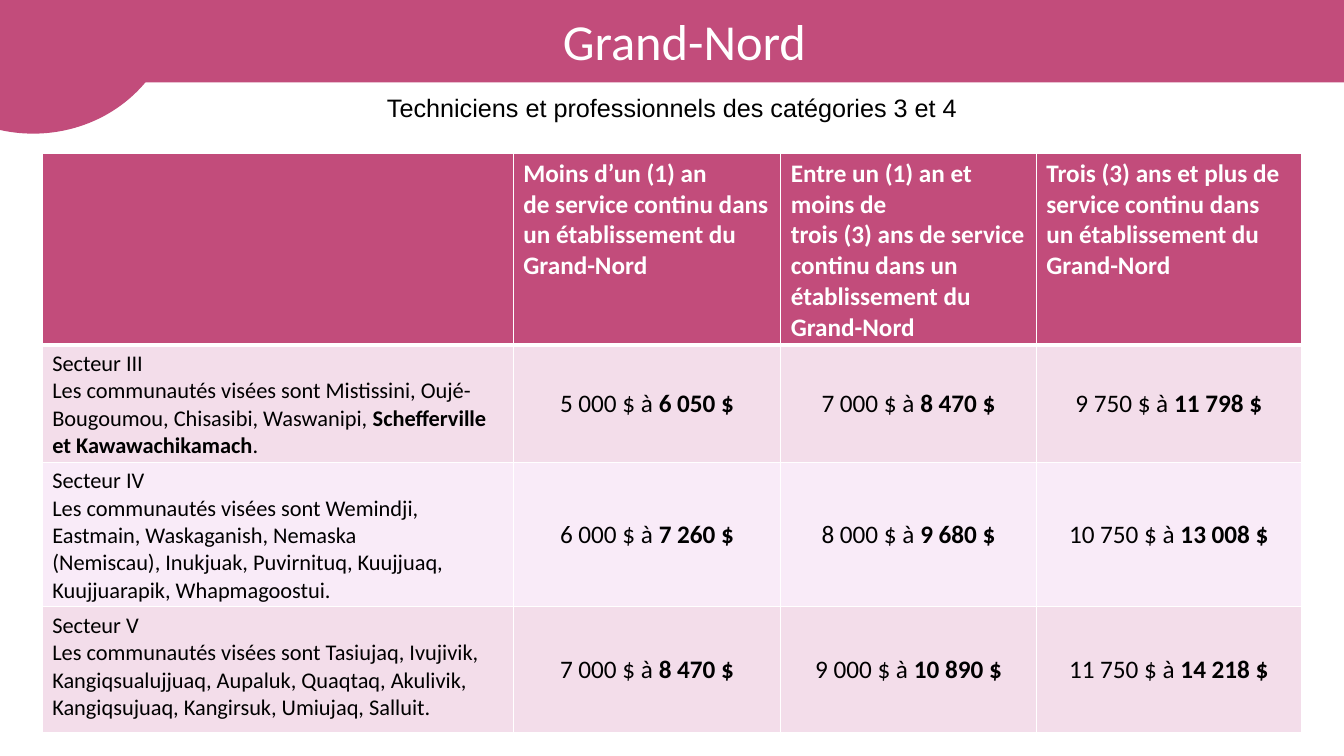
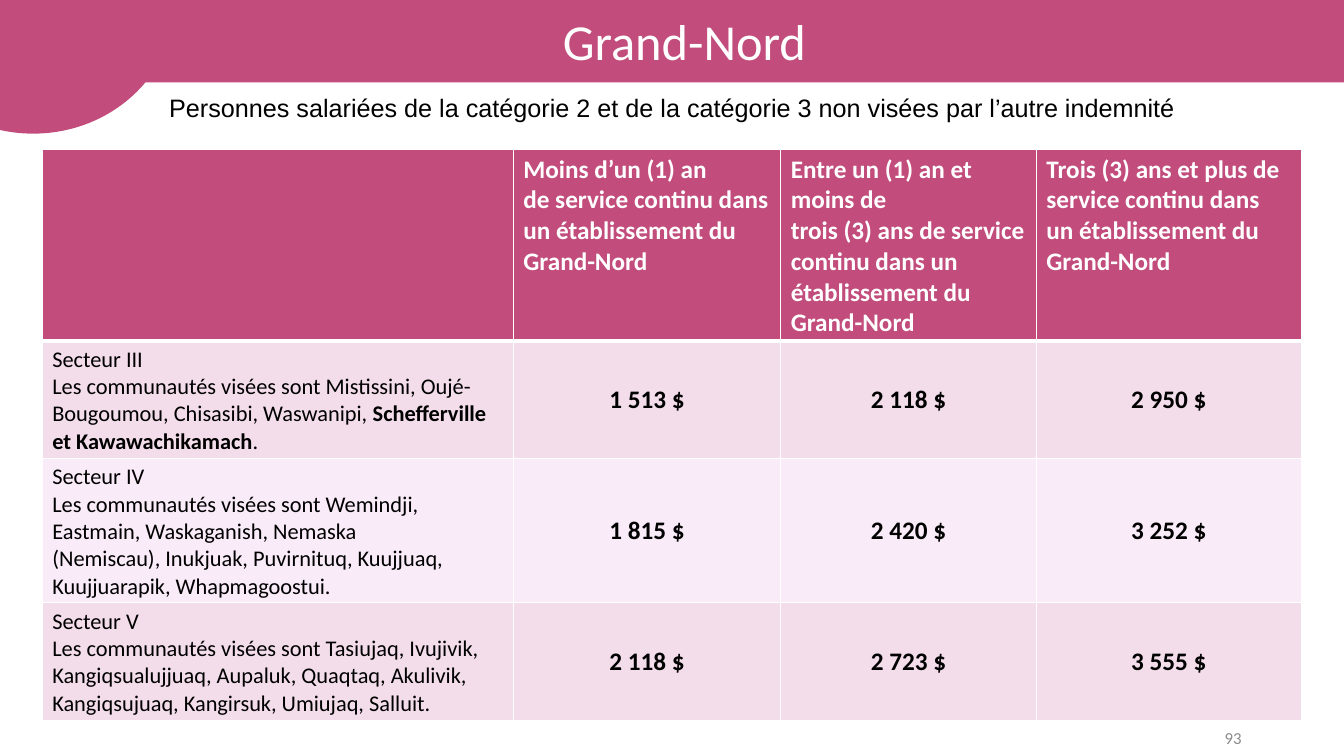
from pptx import Presentation
from pptx.dml.color import RGBColor
from pptx.enum.shapes import MSO_SHAPE
from pptx.enum.text import MSO_ANCHOR, PP_ALIGN
from pptx.oxml import parse_xml
from pptx.oxml.ns import nsdecls
from pptx.util import Pt

PINK, WHITE, BLACK, GREY = "C24C7B", "FFFFFF", "000000", "8C8C8C"
BANDS = ("F3DDEA", "F9EBF8")
WIDE, HIGH = 960, 540
COLS = (336.5, 191, 182.6, 189.2)

TITLE = dict(name="Calibri", size=36, color=WHITE)
SUB = dict(name="Arial", size=18, color=BLACK)
PAGE = dict(name="Calibri", size=12, color=GREY)
HEAD = dict(name="Calibri", size=18, color=WHITE, bold=True)
PLACE = dict(name="Calibri", size=16, color=BLACK)
SUM = dict(name="Calibri", size=18, color=BLACK)

HEADS = (
    (),
    ("Moins d’un (1) an",
     "de service continu dans un établissement du Grand-Nord"),
    ("Entre un (1) an et moins de",
     "trois (3) ans de service continu dans un établissement du Grand-Nord"),
    ("Trois (3) ans et plus de service continu dans un établissement du",
     "Grand-Nord"),
)
PLACES = (
    ("Secteur III",
     "Les communautés visées sont Mistissini, Oujé-Bougoumou, Chisasibi, "
     "Waswanipi, *Schefferville et Kawawachikamach*."),
    ("Secteur IV",
     "Les communautés visées sont Wemindji, Eastmain, Waskaganish, Nemaska",
     "(Nemiscau), Inukjuak, Puvirnituq, Kuujjuaq, Kuujjuarapik, "
     "Whapmagoostui."),
    ("Secteur V",
     "Les communautés visées sont Tasiujaq, Ivujivik, Kangiqsualujjuaq, "
     "Aupaluk, Quaqtaq, Akulivik, Kangiqsujuaq, Kangirsuk, Umiujaq, Salluit."),
)
SLIDES = (
    dict(sub="Techniciens et professionnels des catégories 3 et 4",
         top=109.5, rows=(136, 84, 103, 90), page=None,
         sums=(("5 000 $ à *6 050 $*", "7 000 $ à *8 470 $*",
                "9 750 $ à *11 798 $*"),
               ("6 000 $ à *7 260 $*", "8 000 $ à *9 680 $*",
                "10 750 $ à *13 008 $*"),
               ("7 000 $ à *8 470 $*", "9 000 $ à *10 890 $*",
                "11 750 $ à *14 218 $*"))),
    dict(sub="Personnes salariées de la catégorie 2 et de la catégorie 3 "
             "non visées par l’autre indemnité",
         top=106.5, rows=(136, 84, 103, 84), page="93",
         sums=(("*1 513 $*", "*2 118 $*", "*2 950 $*"),
               ("*1 815 $*", "*2 420 $*", "*3 252 $*"),
               ("*2 118 $*", "*2 723 $*", "*3 555 $*"))),
)


def ink(code):
    """Turn a hex string into a colour."""
    return RGBColor.from_string(code)


def paint(fill, code):
    """Make a fill solid in one colour."""
    fill.solid()
    fill.fore_color.rgb = ink(code)


def style(font, look):
    """Set font attributes from a dict of format values."""
    for key, value in look.items():
        if key == "color":
            font.color.rgb = ink(value)
        else:
            setattr(font, key, Pt(value) if key == "size" else value)


def write(frame, lines, look, align=PP_ALIGN.LEFT):
    """Write one paragraph per line; text between stars is bold."""
    for row, line in enumerate(lines):
        para = frame.add_paragraph() if row else frame.paragraphs[0]
        para.alignment = align
        for spot, part in enumerate(line.split("*")):
            if part:
                run = para.add_run()
                run.text = part
                style(run.font, {"bold": spot % 2 == 1, **look})


def label(slide, box, text, look, align):
    """Place one line of text in a box."""
    frame = slide.shapes.add_textbox(*map(Pt, box)).text_frame
    frame.word_wrap = True
    frame.vertical_anchor = MSO_ANCHOR.MIDDLE
    write(frame, [text], look, align)


def blob(slide, kind, box):
    """Add a pink shape."""
    shape = slide.shapes.add_shape(kind, *map(Pt, box))
    shape.shadow.inherit = False
    paint(shape.fill, PINK)
    shape.line.color.rgb = ink(PINK)
    shape.line.width = Pt(1)
    return shape


def banner(slide, box, text):
    """Draw the title band and the disc over its left end."""
    left, top, wide, high = box
    band = blob(slide, MSO_SHAPE.ROUNDED_RECTANGLE, box)
    band.text_frame.vertical_anchor = MSO_ANCHOR.MIDDLE
    write(band.text_frame, [text], TITLE, PP_ALIGN.CENTER)
    blob(slide, MSO_SHAPE.OVAL, (left - 77.8, top - 95.8, 203, 190.8))


def edge(cell, sides):
    """Draw white cell borders, given a width for each side."""
    props = cell._tc.get_or_add_tcPr()
    for side, width in sides.items():
        props.append(parse_xml(
            f'<a:ln{side} {nsdecls("a")} w="{Pt(width)}"><a:solidFill>'
            f'<a:srgbClr val="{WHITE}"/></a:solidFill></a:ln{side}>'))


def grid(slide, box, rows, sums):
    """Draw the table of amounts by sector and length of service."""
    shape = slide.shapes.add_table(len(rows), len(COLS), *map(Pt, box))
    table = shape.table
    table.first_row = table.horz_banding = False
    for col, wide in zip(table.columns, COLS):
        col.width = Pt(wide)
    for row, high in zip(table.rows, rows):
        row.height = Pt(high)
    body = [(place, *((value,) for value in line))
            for place, line in zip(PLACES, sums)]
    for y, line in enumerate((HEADS, *body)):
        for x, lines in enumerate(line):
            cell = table.cell(y, x)
            edge(cell, dict(L=1, R=1, T=3 if y == 1 else 1,
                            B=1 if y else 3))
            paint(cell.fill, BANDS[(y - 1) % 2] if y else PINK)
            if y and x:
                cell.vertical_anchor = MSO_ANCHOR.MIDDLE
                write(cell.text_frame, lines, SUM, PP_ALIGN.CENTER)
            else:
                write(cell.text_frame, lines, PLACE if y else HEAD)


def build(deck, sub, top, rows, page, sums):
    """Add one slide with its banner, subtitle, table and number."""
    slide = deck.slides.add_slide(deck.slide_layouts[6])
    banner(slide, (0, 0, 977.8, 58.3), "Grand-Nord")
    label(slide, (0, 62.5, WIDE, 29), sub, SUB, PP_ALIGN.CENTER)
    grid(slide, (30.2, top, sum(COLS), sum(rows)), rows, sums)
    if page:
        label(slide, (678, 516, 216, 22), page, PAGE, PP_ALIGN.RIGHT)


def main():
    """Build and save the deck."""
    deck = Presentation()
    deck.slide_width, deck.slide_height = Pt(WIDE), Pt(HIGH)
    for part in SLIDES:
        build(deck, **part)
    deck.save("out.pptx")


if __name__ == "__main__":
    main()
